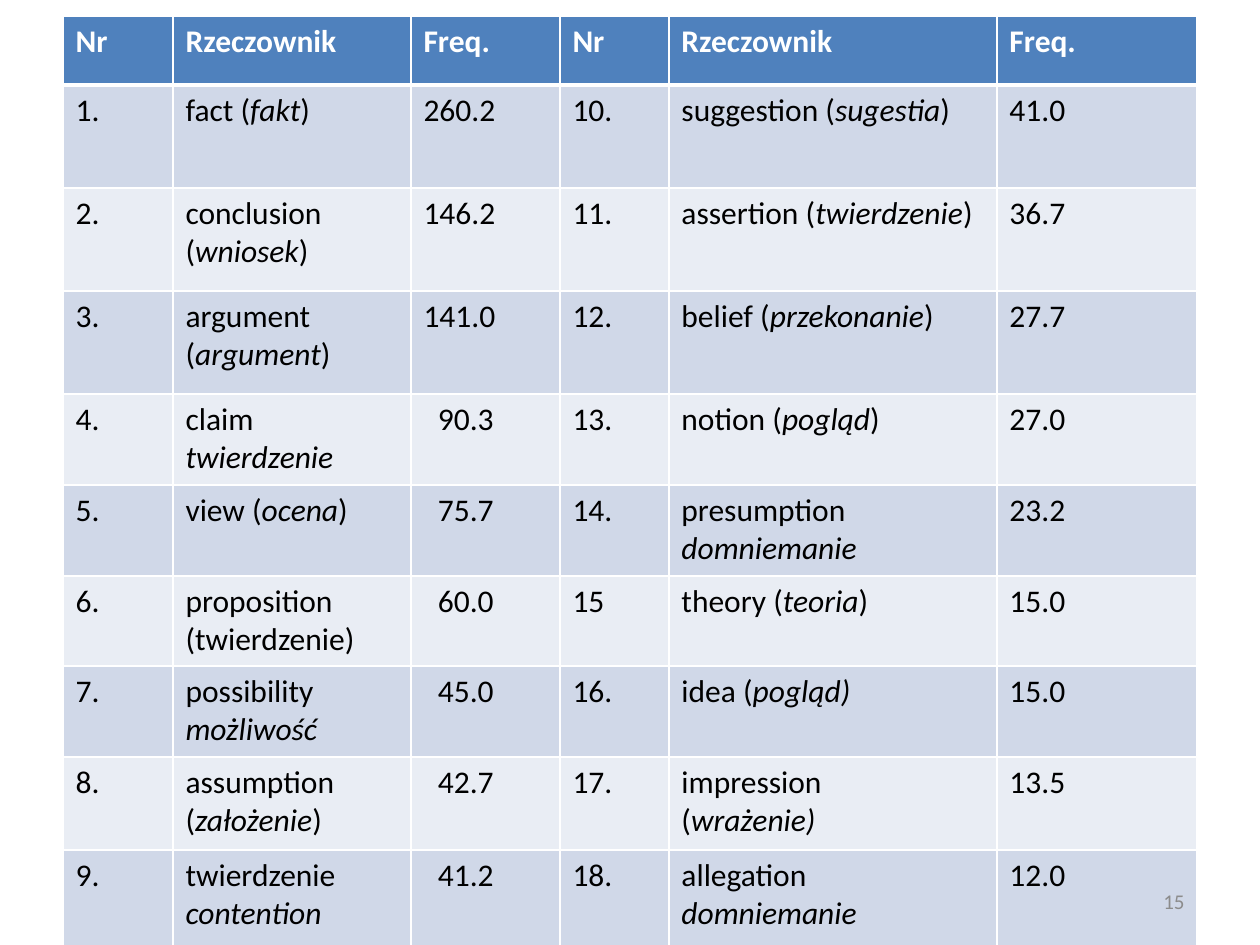
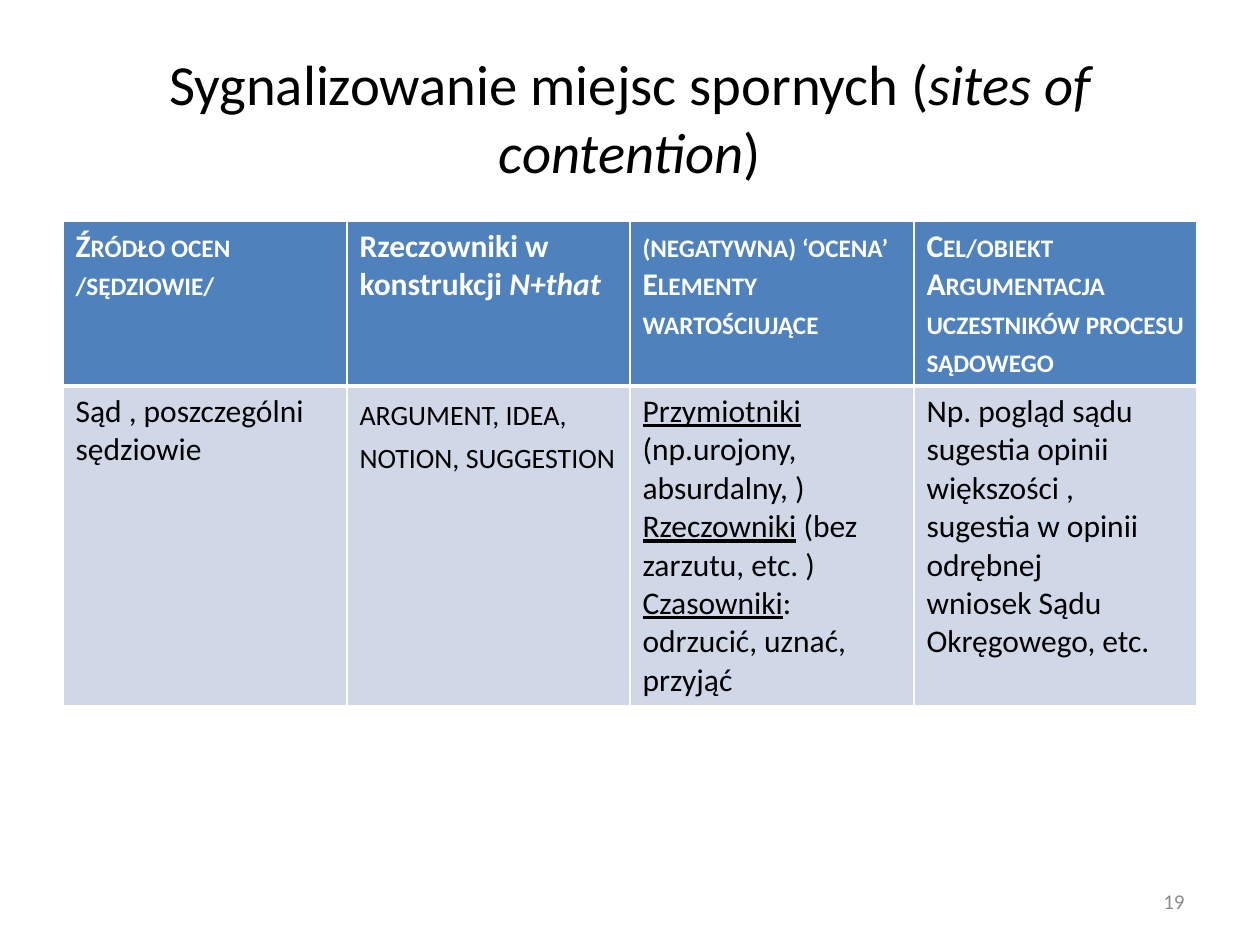
from lxml import etree
from pptx import Presentation, util as u
from pptx.dml.color import RGBColor
from pptx.enum import text
from pptx.oxml import ns

PX = 914400 / 126
FONT = "Calibri"
BLUE = RGBColor(0x4F, 0x81, 0xBD)
BAND_DARK = RGBColor(0xD0, 0xD8, 0xE8)
BAND_LIGHT = RGBColor(0xE9, 0xED, 0xF4)
WHITE = RGBColor(0xFF, 0xFF, 0xFF)
BLACK = RGBColor(0, 0, 0)
GREY = RGBColor(0x8C, 0x8C, 0x8C)
SMALL_CAPS = "^"

NOUN_COLUMNS = [110, 238, 149, 109, 328, 200]
NOUN_ROWS = [69, 103, 103, 103, 91, 91, 90, 91, 93, 103]
NOUNS = [
    ["Nr", "Rzeczownik", "Freq."] * 2,
    ["1.", "fact (*fakt*)", "260.2", "10.", "suggestion (*sugestia*)", "41.0"],
    ["2.", "conclusion (*wniosek*)", "146.2", "11.", "assertion (*twierdzenie*)", "36.7"],
    ["3.", "argument (*argument*)", "141.0", "12.", "belief (*przekonanie*)", "27.7"],
    ["4.", "claim\n*twierdzenie*", "90.3", "13.", "notion (*pogląd*)", "27.0"],
    ["5.", "view (*ocena*)", "75.7", "14.", "presumption *domniemanie*", "23.2"],
    ["6.", "proposition\n(twierdzenie)", "60.0", "15", "theory (*teoria*)", "15.0"],
    ["7.", "possibility\n*możliwość*", "45.0", "16.", "idea (*pogląd)*", "15.0"],
    ["8.", "assumption\n(*założenie*)", "42.7", "17.", "impression\n(*wrażenie)*", "13.5"],
    ["9.", "twierdzenie *contention*", "41.2", "18.", "allegation *domniemanie*", "12.0"],
]

SITE_COLUMNS = [284, 283, 284, 283]
SITE_ROWS = [165, 320]
SITES = [
    ["^Źródło ocen /sędziowie/",
     "Rzeczowniki w konstrukcji *N+that*",
     "^(negatywna) ‘ocena’\nElementy wartościujące",
     "^Cel/obiekt\nArgumentacja uczestników procesu sądowego"],
    ["Sąd , poszczególni sędziowie",
     "^argument, idea, notion, suggestion",
     "_Przymiotniki _(np.urojony, absurdalny, )\n"
     "_Rzeczowniki_ (bez zarzutu, etc. )\n"
     "_Czasowniki_: odrzucić, uznać, przyjąć",
     "Np. pogląd sądu\n"
     "sugestia opinii większości , sugestia w opinii odrębnej\n"
     "wniosek Sądu Okręgowego, etc."],
]


def write(frame, marked, size, colour, bold=False, align=text.PP_ALIGN.LEFT):
    """Write paragraphs; *...* is italic, _..._ underlined, a leading ^ small caps."""
    frame.word_wrap = True
    small_caps = marked.startswith(SMALL_CAPS)
    for number, line in enumerate(marked.lstrip(SMALL_CAPS).split("\n")):
        paragraph = frame.add_paragraph() if number else frame.paragraphs[0]
        paragraph.alignment = align
        for i, slanted in enumerate(line.split("*")):
            for j, words in enumerate(slanted.split("_")):
                if not words:
                    continue
                run = paragraph.add_run()
                run.text = words
                font = run.font
                font.name, font.size, font.bold = FONT, u.Pt(size), bold
                font.color.rgb = colour
                font.italic = i % 2 == 1
                font.underline = j % 2 == 1
                if small_caps:
                    font._element.set("cap", "small")


def add_grid(slide, top, columns, rows, contents):
    """Add a banded table with white rules and a thick rule below its header."""
    frame = slide.shapes.add_table(
        len(rows), len(columns), u.Emu(int(63 * PX)), u.Emu(int(top * PX)),
        u.Emu(int(sum(columns) * PX)), u.Emu(int(sum(rows) * PX)))
    table = frame.table
    table.horz_banding = False
    for column, width in zip(table.columns, columns):
        column.width = u.Emu(int(width * PX))
    for r, (row, height) in enumerate(zip(table.rows, rows)):
        row.height = u.Emu(int(height * PX))
        header = r == 0
        for cell, marked in zip(row.cells, contents[r]):
            properties = cell._tc.get_or_add_tcPr()
            for side in "LRTB":
                thick = (r, side) in ((0, "B"), (1, "T"))
                rule = etree.SubElement(properties, ns.qn(f"a:ln{side}"),
                                        w=str(u.Pt(3 if thick else 1)))
                paint = etree.SubElement(rule, ns.qn("a:solidFill"))
                etree.SubElement(paint, ns.qn("a:srgbClr"), val=str(WHITE))
            cell.fill.solid()
            cell.fill.fore_color.rgb = BLUE if header else (BAND_LIGHT, BAND_DARK)[r % 2]
            size = 20 if marked.startswith(SMALL_CAPS) and not header else 18
            write(cell.text_frame, marked, size, WHITE if header else BLACK, header)
    return table


deck = Presentation()
deck.slide_width, deck.slide_height = u.Inches(10), u.Inches(7.5)
nouns_slide, sites_slide = [deck.slides.add_slide(deck.slide_layouts[6]) for _ in range(2)]

# Noun frequencies, with two-digit values moved in under the three-digit ones
noun_table = add_grid(nouns_slide, 16, NOUN_COLUMNS, NOUN_ROWS, NOUNS)
for r, (_, _, frequency, *_) in enumerate(NOUNS):
    if r and float(frequency) < 100:
        noun_table.cell(r, 2).margin_left = u.Emu(int(27 * PX))

# Sites of contention
add_grid(sites_slide, 221, SITE_COLUMNS, SITE_ROWS, SITES)

# Title and slide numbers
for slide, box, words, size, colour, align in (
    (sites_slide, (63, 38, 1134, 157), "Sygnalizowanie miejsc spornych (*sites of contention*)",
     32.4, BLACK, text.PP_ALIGN.CENTER),
    (nouns_slide, (903, 876, 294, 50), "15", 12, GREY, text.PP_ALIGN.RIGHT),
    (sites_slide, (903, 876, 294, 50), "19", 12, GREY, text.PP_ALIGN.RIGHT),
):
    label = slide.shapes.add_textbox(*(u.Emu(int(length * PX)) for length in box))
    label.text_frame.vertical_anchor = text.MSO_ANCHOR.MIDDLE
    write(label.text_frame, words, size, colour, align=align)

deck.save("out.pptx")
